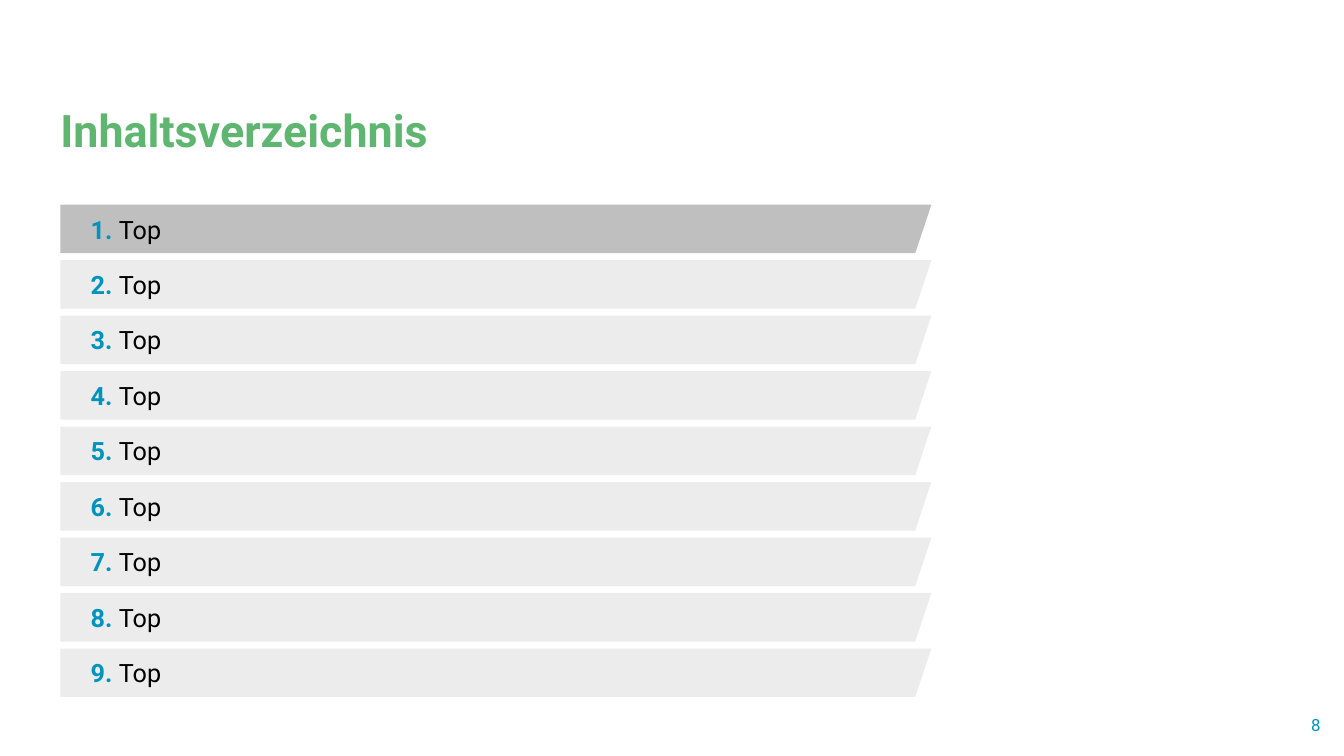
from dataclasses import dataclass

from pptx import Presentation
from pptx import util as u
from pptx.dml.color import RGBColor
from pptx.enum import text

FONT = "Roboto"
COLORS = {
    "title": "5FB670",
    "accent": "0093BE",
    "text": "000000",
    "active": "BFBFBF",
    "inactive": "ECECEC",
}

# Agenda bars, in points
BAR_LEFT, BAR_TOP = 43.2, 146.2
BAR_WIDTH, BAR_HEIGHT = 622.1, 34.6
BAR_SLANT = 11.5
BAR_PITCH = 39.63
NUMBER_INDENT = 20.16


@dataclass
class Label:
    content: str
    left: float
    top: float
    width: float
    height: float
    size: float
    color: str
    bold: bool
    anchor: text.MSO_ANCHOR
    alignment: text.PP_ALIGN
    line_spacing: float = 1.0


@dataclass
class AgendaItem:
    number: int
    title: str
    fill: str


LABELS = [
    Label("Inhaltsverzeichnis", 43.2, 77.8, 753.8, 33.8, 32, "title", True,
          text.MSO_ANCHOR.BOTTOM, text.PP_ALIGN.LEFT, 0.85),
    Label("8", 907.2, 510.5, 36, 14.4, 12, "accent", False,
          text.MSO_ANCHOR.MIDDLE, text.PP_ALIGN.RIGHT),
]
AGENDA = [AgendaItem(number, "Top", "active" if number == 1 else "inactive")
          for number in range(1, 10)]


def color(name: str) -> RGBColor:
    return RGBColor.from_string(COLORS[name])


def format_run(run, size: float, color_name: str, bold: bool) -> None:
    run.font.name = FONT
    run.font.size = u.Pt(size)
    run.font.bold = bold
    run.font.color.rgb = color(color_name)


def set_margins(frame, left: float, top: float, right: float, bottom: float) -> None:
    frame.margin_left, frame.margin_top = u.Pt(left), u.Pt(top)
    frame.margin_right, frame.margin_bottom = u.Pt(right), u.Pt(bottom)


def draw_label(slide, label: Label) -> None:
    box = slide.shapes.add_textbox(u.Pt(label.left), u.Pt(label.top),
                                   u.Pt(label.width), u.Pt(label.height))
    frame = box.text_frame
    frame.word_wrap = True
    frame.vertical_anchor = label.anchor
    set_margins(frame, 0, 0, 0, 0)
    frame.text = label.content
    paragraph = frame.paragraphs[0]
    paragraph.alignment = label.alignment
    paragraph.line_spacing = label.line_spacing
    format_run(paragraph.runs[0], label.size, label.color, label.bold)


def draw_agenda_item(slide, item: AgendaItem) -> None:
    # Bar with a slanted right end
    top = BAR_TOP + (item.number - 1) * BAR_PITCH
    right, bottom = BAR_LEFT + BAR_WIDTH, top + BAR_HEIGHT
    builder = slide.shapes.build_freeform(u.Pt(BAR_LEFT), u.Pt(top))
    corners = [(right, top), (right - BAR_SLANT, bottom), (BAR_LEFT, bottom)]
    builder.add_line_segments([(u.Pt(x), u.Pt(y)) for x, y in corners], close=True)
    shape = builder.convert_to_shape()
    shape.shadow.inherit = False
    shape.fill.solid()
    shape.fill.fore_color.rgb = color(item.fill)
    shape.line.fill.background()

    # Number and title on a hanging indent
    frame = shape.text_frame
    frame.word_wrap = True
    frame.vertical_anchor = text.MSO_ANCHOR.MIDDLE
    set_margins(frame, 21.6, 3.6, 7.2, 3.6)
    paragraph = frame.paragraphs[0]
    paragraph.text = f"{item.number}.\t"
    paragraph.alignment = text.PP_ALIGN.LEFT
    properties = paragraph._p.get_or_add_pPr()
    properties.set("marL", str(u.Pt(NUMBER_INDENT)))
    properties.set("indent", str(-u.Pt(NUMBER_INDENT)))
    paragraph.add_run().text = item.title
    number_run, title_run = paragraph.runs
    format_run(number_run, 18, "accent", True)
    format_run(title_run, 18, "text", False)


def main() -> None:
    presentation = Presentation()
    presentation.slide_width, presentation.slide_height = u.Pt(960), u.Pt(540)
    slide = presentation.slides.add_slide(presentation.slide_layouts[6])

    # Title and page number
    for label in LABELS:
        draw_label(slide, label)

    # Table of contents
    for item in AGENDA:
        draw_agenda_item(slide, item)

    presentation.save("out.pptx")


if __name__ == "__main__":
    main()
